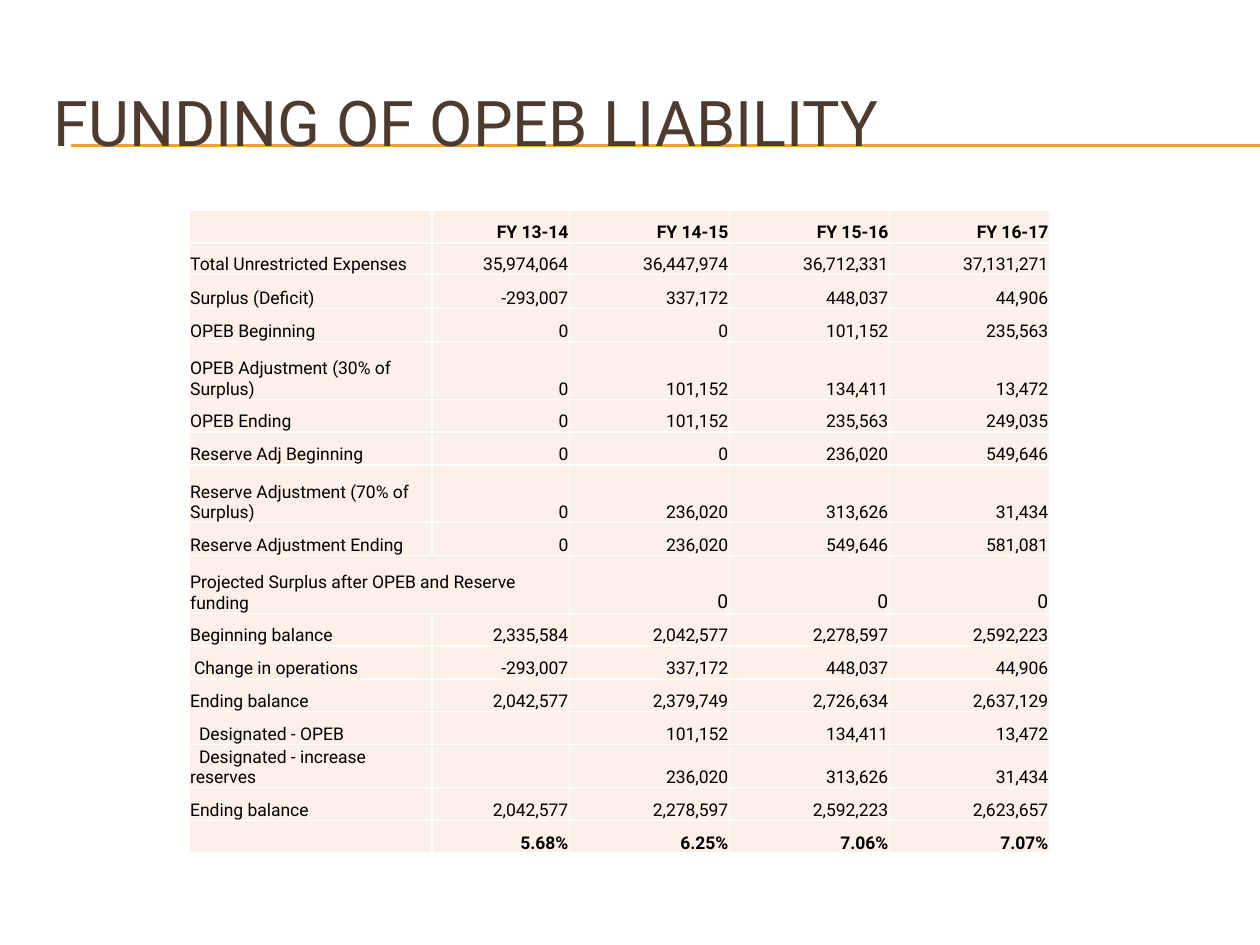
from dataclasses import dataclass

from lxml.etree import SubElement
from pptx import Presentation
from pptx.dml.color import RGBColor
from pptx.enum.shapes import MSO_CONNECTOR
from pptx.enum.text import MSO_ANCHOR as ANCHOR, PP_ALIGN as ALIGN
from pptx.oxml.ns import qn
from pptx.util import Inches, Pt

FONT = "Roboto"
CELL_FILL = "FCF0E8"
BORDER = "FFFFFF"
ACCENT = "F0A22E"


@dataclass
class Row:
    label: str
    values: tuple
    height: float = 0.26
    size: float = 10
    bold: bool = False
    indent: float = 0
    span: int = 1


COL_WIDTHS = (1.93, 1.09, 1.27, 1.27, 1.27)
ROWS = (
    Row("", ("FY 13-14", "FY 14-15", "FY 15-16", "FY 16-17"), bold=True),
    Row("Total Unrestricted Expenses",
        ("35,974,064", "36,447,974", "36,712,331", "37,131,271"), 0.25),
    Row("Surplus (Deficit)", ("-293,007", "337,172", "448,037", "44,906"), 0.27),
    Row("OPEB Beginning", ("0", "0", "101,152", "235,563")),
    Row("OPEB Adjustment (30% of Surplus)", ("0", "101,152", "134,411", "13,472"), 0.46),
    Row("OPEB Ending", ("0", "101,152", "235,563", "249,035")),
    Row("Reserve Adj Beginning", ("0", "0", "236,020", "549,646")),
    Row("Reserve Adjustment (70% of Surplus)", ("0", "236,020", "313,626", "31,434"), 0.46),
    Row("Reserve Adjustment Ending", ("0", "236,020", "549,646", "581,081")),
    Row("Projected Surplus after OPEB and Reserve funding",
        ("", "0", "0", "0"), 0.46, size=11, span=2),
    Row("Beginning balance", ("2,335,584", "2,042,577", "2,278,597", "2,592,223")),
    Row("Change in operations", ("-293,007", "337,172", "448,037", "44,906"), indent=0.03),
    Row("Ending balance", ("2,042,577", "2,379,749", "2,726,634", "2,637,129")),
    Row("Designated - OPEB", ("", "101,152", "134,411", "13,472"), indent=0.07),
    Row("Designated - increase reserves", ("", "236,020", "313,626", "31,434"), 0.34, indent=0.07),
    Row("Ending balance", ("2,042,577", "2,278,597", "2,592,223", "2,623,657")),
    Row("", ("5.68%", "6.25%", "7.06%", "7.07%"), bold=True),
)


def rgb(value: str) -> RGBColor:
    return RGBColor.from_string(value)


def put_text(tf, text: str, *, size: float = 10, color: str = "000000",
             bold: bool = False, align=ALIGN.LEFT, indent: float = 0) -> None:
    p = tf.paragraphs[0]
    p.alignment = align
    if indent:
        pPr = p._p.get_or_add_pPr()
        pPr.set("marL", "0")
        pPr.set("indent", str(Inches(indent)))
    if not text:
        SubElement(p._p, qn("a:endParaRPr"), sz=str(int(size * 100)))
        return
    r = p.add_run()
    r.text = text
    r.font.name = FONT
    r.font.size = Pt(size)
    r.font.bold = bold
    r.font.color.rgb = rgb(color)


def add_rule(s, y: float) -> None:
    line = s.shapes.add_connector(
        MSO_CONNECTOR.STRAIGHT, Inches(0.56), Inches(y), Inches(10), Inches(y))
    line.line.color.rgb = rgb(ACCENT)
    line.line.width = Pt(0.75)
    SubElement(line._element.spPr, qn("a:effectLst"))


def style_cell(cell) -> None:
    tcPr = cell._tc.get_or_add_tcPr()
    for side in ("lnL", "lnR", "lnT", "lnB"):
        ln = SubElement(tcPr, qn(f"a:{side}"), w=str(Pt(1)))
        SubElement(SubElement(ln, qn("a:solidFill")), qn("a:srgbClr"), val=BORDER)
    cell.fill.solid()
    cell.fill.fore_color.rgb = rgb(CELL_FILL)
    cell.vertical_anchor = ANCHOR.BOTTOM
    cell.margin_left = cell.margin_right = cell.margin_top = Inches(0.01)
    cell.margin_bottom = 0


def add_title(s, text: str) -> None:
    sp = s.shapes.add_textbox(Inches(0.33), Inches(0.5), Inches(9.5), Inches(0.92))
    tf = sp.text_frame
    tf.word_wrap = True
    tf.vertical_anchor = ANCHOR.MIDDLE
    put_text(tf, text, size=36, color="4E3B30")


def add_funding_table(s) -> None:
    table = s.shapes.add_table(
        len(ROWS), len(COL_WIDTHS), Inches(1.5), Inches(1.67),
        Inches(sum(COL_WIDTHS)), Inches(sum(row.height for row in ROWS))).table
    for column, width in zip(table.columns, COL_WIDTHS):
        column.width = Inches(width)
    for i, row in enumerate(ROWS):
        table.rows[i].height = Inches(row.height)
        for j, text in enumerate((row.label, *row.values)):
            cell = table.cell(i, j)
            style_cell(cell)
            if j == 0:
                put_text(cell.text_frame, text, indent=row.indent)
            else:
                put_text(cell.text_frame, text, size=row.size, bold=row.bold,
                         align=ALIGN.RIGHT)
        if row.span > 1:
            table.cell(i, 0).merge(table.cell(i, row.span - 1))


def main() -> None:
    prs = Presentation()
    prs.slide_width, prs.slide_height = Inches(10), Inches(7.5)
    s = prs.slides.add_slide(prs.slide_layouts[6])
    for y in (1.15, 1.16):
        add_rule(s, y)
    add_title(s, "FUNDING OF OPEB LIABILITY")
    add_funding_table(s)
    prs.save("out.pptx")


if __name__ == "__main__":
    main()
